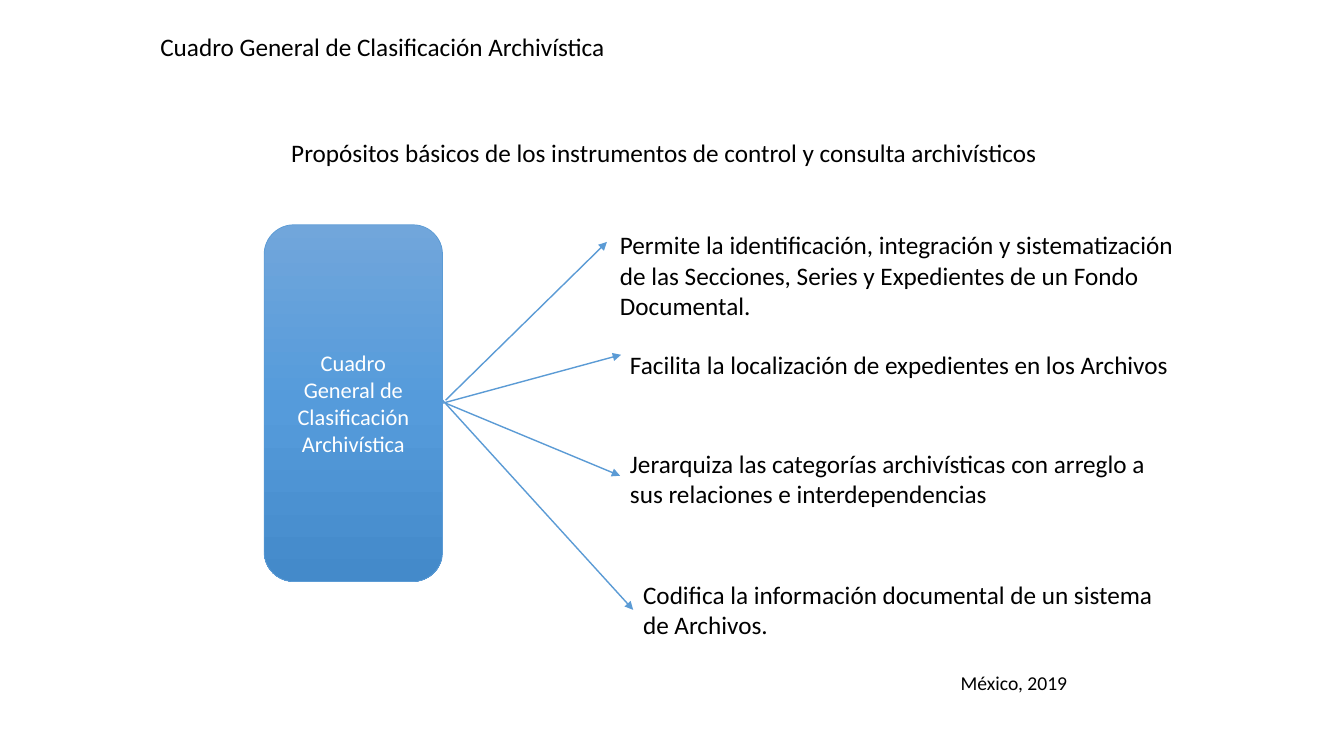
from copy import deepcopy
from math import isclose

from pptx import Presentation
from pptx.dml.color import RGBColor
from pptx.enum import shapes, text
from pptx.oxml import ns, xmlchemy
from pptx.util import Inches, Pt

BLACK = RGBColor(0x00, 0x00, 0x00)
WHITE = RGBColor(0xFF, 0xFF, 0xFF)
BLUE = RGBColor(0x5B, 0x9B, 0xD5)
BOX_GRADIENT = [
    (0, RGBColor(0x71, 0xA6, 0xDB)),
    (0.5, RGBColor(0x55, 0x9B, 0xDB)),
    (1, RGBColor(0x44, 0x8A, 0xCA)),
]

TITLE = "Cuadro General de Clasificación Archivística"
TITLE_AREA = (1.49, 0.26, 4.66, 0.4)
SUBTITLE = "Propósitos básicos de los instrumentos de control y consulta archivísticos"
SUBTITLE_AREA = (2.79, 1.31, 7.68, 0.4)
BOX_AREA = (2.62, 2.23, 1.77, 3.54)
PLACE_DATE = "México, 2019"
PLACE_DATE_AREA = (9.43, 6.61, 2.34, 0.34)

PURPOSES = [
    {
        "lines": [
            "Permite la identificación, integración y sistematización",
            "de las Secciones, Series y Expedientes de un Fondo",
            "Documental.",
        ],
        "area": (6.05, 2.23, 5.75, 1.01),
        "arrow": ((4.42, 3.97), (6.02, 2.4)),
    },
    {
        "lines": ["Facilita la localización de expedientes en los Archivos"],
        "area": (6.15, 3.42, 5.6, 0.4),
        "arrow": ((4.39, 4), (6.16, 3.52)),
    },
    {
        "lines": [
            "Jerarquiza las categorías archivísticas con arreglo a",
            "sus relaciones e interdependencias",
        ],
        "area": (6.15, 4.4, 5.37, 0.71),
        "arrow": ((4.42, 4), (6.15, 4.72)),
    },
    {
        "lines": [
            "Codifica la información documental de un sistema",
            "de Archivos.",
        ],
        "area": (6.28, 5.7, 5.37, 0.71),
        "arrow": ((4.38, 3.96), (6.28, 6.05)),
    },
]


def inches(values):
    return [Inches(value) for value in values]


def write_text(shape, lines, size=18, color=BLACK, align=text.PP_ALIGN.LEFT,
               anchor=text.MSO_ANCHOR.TOP, wrap=False):
    frame = shape.text_frame
    frame.text = "\n".join(lines)
    frame.word_wrap = wrap
    frame.auto_size = text.MSO_AUTO_SIZE.NONE
    frame.vertical_anchor = anchor
    for paragraph in frame.paragraphs:
        paragraph.alignment = align
        font = paragraph.runs[0].font
        font.name = "Calibri"
        font.size = Pt(size)
        font.color.rgb = color


def add_text(slide, lines, area, **text_format):
    write_text(slide.shapes.add_textbox(*inches(area)), lines, **text_format)


def fill_gradient(shape, stops):
    shape.fill.gradient()
    shape.fill.gradient_angle = 270
    stop_list = shape._element.spPr.find(".//" + ns.qn("a:gsLst"))
    while len(stop_list) < len(stops):
        stop_list.append(deepcopy(stop_list[-1]))
    for stop, (position, color) in zip(shape.fill.gradient_stops, stops):
        stop.position = position
        stop.color.rgb = color


def add_box(slide):
    box = slide.shapes.add_shape(
        shapes.MSO_SHAPE.ROUNDED_RECTANGLE, *inches(BOX_AREA))
    box.shadow.inherit = False
    fill_gradient(box, BOX_GRADIENT)
    box.line.color.rgb = BLUE
    box.line.width = Pt(0.5)
    write_text(box, [TITLE], size=16, color=WHITE, align=text.PP_ALIGN.CENTER,
               anchor=text.MSO_ANCHOR.MIDDLE, wrap=True)
    return box


def add_arrow(slide, box, start, end):
    arrow = slide.shapes.add_connector(
        shapes.MSO_CONNECTOR.STRAIGHT, *inches(start + end))
    left, top, width, height = BOX_AREA
    if isclose(start[0], left + width) and isclose(start[1], top + height / 2):
        arrow.begin_connect(box, 3)
    arrow.line.color.rgb = BLUE
    arrow.line.width = Pt(1)
    head = xmlchemy.OxmlElement("a:tailEnd")
    head.set("type", "triangle")
    arrow.line._get_or_add_ln().append(head)
    arrow._element.spPr.append(xmlchemy.OxmlElement("a:effectLst"))


def main():
    presentation = Presentation()
    presentation.slide_width = Inches(13.33)
    presentation.slide_height = Inches(7.5)
    slide = presentation.slides.add_slide(presentation.slide_layouts[5])

    title = slide.shapes.title
    title.left, title.top, title.width, title.height = inches(TITLE_AREA)
    write_text(title, [TITLE])
    add_text(slide, [SUBTITLE], SUBTITLE_AREA)
    box = add_box(slide)
    for purpose in PURPOSES:
        add_arrow(slide, box, *purpose["arrow"])
        add_text(slide, purpose["lines"], purpose["area"])
    add_text(slide, [PLACE_DATE], PLACE_DATE_AREA, size=14, wrap=True)

    presentation.save("out.pptx")


if __name__ == "__main__":
    main()
